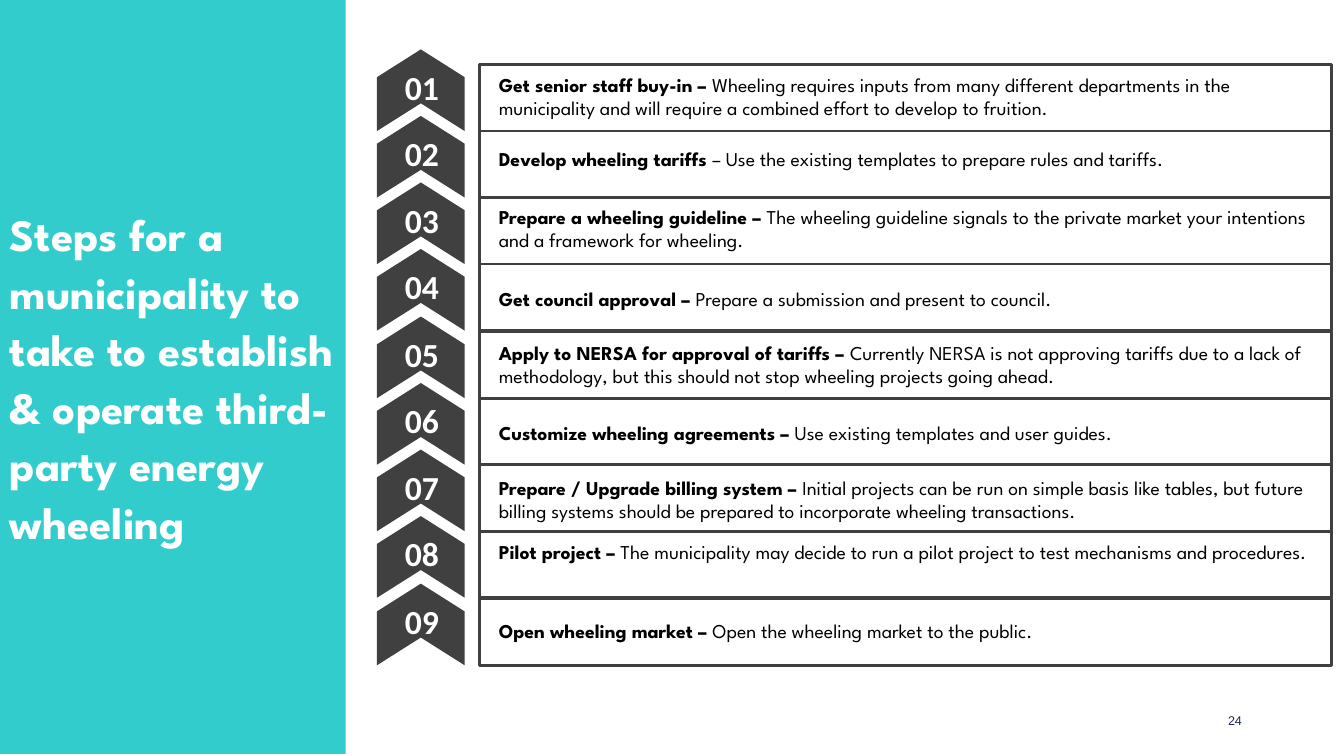
from pptx import Presentation
from pptx.dml.color import RGBColor
from pptx.enum.shapes import MSO_SHAPE
from pptx.enum.text import MSO_ANCHOR, PP_ALIGN
from pptx.util import Emu, Pt

PX = 9144  # 100 px to the inch
DARK = "404040"
TOP, SPAN = 64, 530  # first row, and the way from first to last row

# Lead, detail and top of each step's text
STEPS = [
    ("Get senior staff buy-in – ",
     "Wheeling requires inputs from many different departments in the "
     "municipality and will require a combined effort to develop to fruition.", 67),
    ("Develop wheeling tariffs ",
     "– Use the existing templates to prepare rules and tariffs.", 141),
    ("Prepare a wheeling guideline – ",
     "The wheeling guideline signals to the private market your intentions "
     "and a framework for wheeling.", 198),
    ("Get council approval – ",
     "Prepare a submission and present to council.", 280),
    ("Apply to NERSA for approval of tariffs – ",
     "Currently NERSA is not approving tariffs due to a lack of methodology, "
     "but this should not stop wheeling projects going ahead.", 333),
    ("Customize wheeling agreements – ",
     "Use existing templates and user guides.", 413),
    ("Prepare / Upgrade billing system – ",
     "Initial projects can be run on simple basis like tables, but future "
     "billing systems should be prepared to incorporate wheeling transactions.", 467),
    ("Pilot project – ",
     "The municipality may decide to run a pilot project to test mechanisms "
     "and procedures.", 531),
    ("Open wheeling market – ",
     "Open the wheeling market to the public.", 609),
]

deck = Presentation()
deck.slide_width, deck.slide_height = Emu(12192000), Emu(7.5 * 100 * PX)
slide = deck.slides.add_slide(deck.slide_layouts[6])


def shape(kind, x, y, w, h, fill=None, line=None):
    item = slide.shapes.add_shape(kind, *(Emu(n * PX) for n in (x, y, w, h)))
    item.shadow.inherit = False
    for part, color in ((item.fill, fill), (item.line.fill, line)):
        if color:
            part.solid()
            part.fore_color.rgb = RGBColor.from_string(color)
        else:
            part.background()
    return item


def write(item, runs, size, face, color, bold=None, align=PP_ALIGN.LEFT,
          anchor=MSO_ANCHOR.TOP):
    frame = item.text_frame
    frame.word_wrap = True
    frame.vertical_anchor = anchor
    para = frame.paragraphs[0]
    para.alignment = align
    para.font.size, para.font.name, para.font.bold = Pt(size), face, bold
    para.font.color.rgb = RGBColor.from_string(color)
    for text, heavy in runs:
        run = para.add_run()
        run.text = text
        if heavy:
            run.font.bold = True
    return para


def_box = slide.shapes.add_textbox

# Title panel
panel = shape(MSO_SHAPE.RECTANGLE, 0, -2, 343, 750, fill="33CCCC")
title = write(panel, [("Steps for a municipality to take to establish & operate "
                       "third-party energy wheeling", False)],
              32, "League Spartan", "FFFFFF", bold=True, anchor=MSO_ANCHOR.MIDDLE)
title.line_spacing = 1.07

# Rows: frame, chevron, number and text
for i, (lead, detail, text_top) in enumerate(STEPS):
    y = TOP + SPAN * i // (len(STEPS) - 1)
    frame = shape(MSO_SHAPE.RECTANGLE, 476, y, 845, 66, line=DARK)
    frame.line.width = Pt(2)

    arrow = shape(MSO_SHAPE.CHEVRON, 377, y - 18, 81, 87, fill=DARK)
    arrow.adjustments[0] = 0.34
    arrow.rotation = 270

    label = def_box(388 * PX, (y - 3) * PX, 61 * PX, 50 * PX)
    write(label, [(f"{i + 1:02}", False)], 24, "Calibri", "FFFFFF",
          bold=True, align=PP_ALIGN.CENTER)

    note = def_box(485 * PX, text_top * PX, 827 * PX, 57 * PX)
    write(note, [(lead, True), (detail, False)], 14, "League Spartan", "000000")

# Page number
page = def_box(942 * PX, 695 * PX, 300 * PX, 40 * PX)
write(page, [("24", False)], 9, "Arial", "242852",
      align=PP_ALIGN.RIGHT, anchor=MSO_ANCHOR.MIDDLE)

deck.save("out.pptx")
